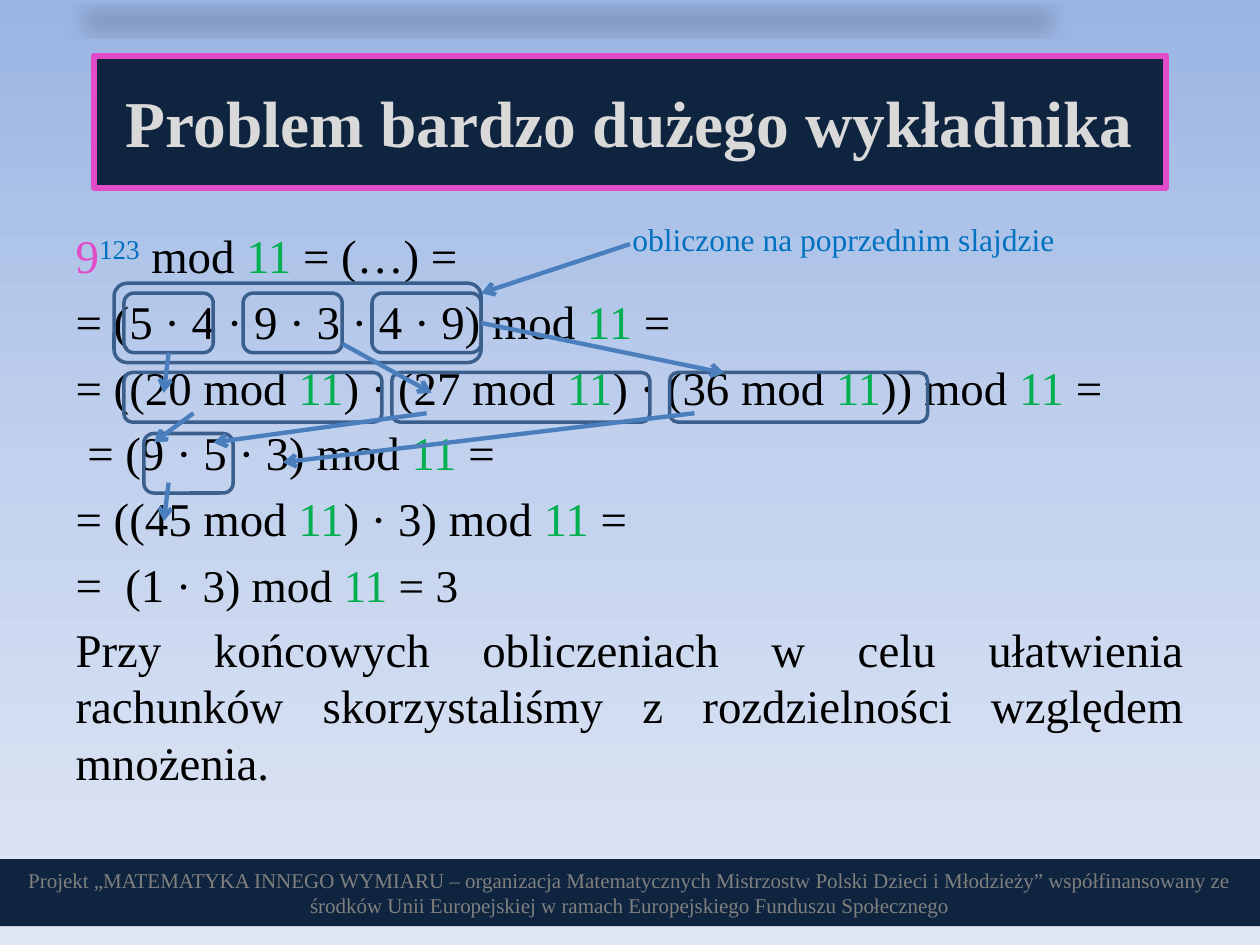
from copy import deepcopy
from dataclasses import dataclass

from lxml import etree
from pptx import Presentation
from pptx import util as u
from pptx.dml.color import RGBColor
from pptx.enum import shapes, text
from pptx.oxml.ns import qn

FONT = "Times New Roman"
C = {
    "sky_top": "9AB5E4", "sky_mid": "C2D1ED", "sky_bottom": "E1E8F5",
    "navy": "0F243E", "pink": "E24CC9", "silver": "D9D9D9", "grey": "808080",
    "black": "000000", "green": "00B050", "blue": "0070C0",
    "outline": "3A5F8C", "arrow": "4B7EBC",
}


@dataclass
class Seg:
    text: str
    color: str = "black"
    size: float = 26.8
    bold: bool = False
    base: int = 0


@dataclass
class Box:
    x: float
    y: float
    w: float
    h: float


@dataclass
class Arrow:
    x1: float
    y1: float
    x2: float
    y2: float
    box: int | None = None
    site: int = 0


LINES = [
    [Seg("9", "pink"), Seg("123", "blue", base=30), Seg(" mod 11 = (…) =")],
    [Seg("= (5 · 4 · 9 · 3 · 4 · 9) mod 11 =")],
    [Seg("= ((20 mod 11) · (27 mod 11) · (36 mod 11)) mod 11 =")],
    [Seg(" = (9 · 5 · 3) mod 11 =")],
    [Seg("= ((45 mod 11) · 3) mod 11 =")],
    [Seg("=  (1 "), Seg("· 3) mod 11 = 3", size=25.9)],
    [Seg("Przy końcowych obliczeniach w celu ułatwienia rachunków "
         "skorzystaliśmy z rozdzielności względem mnożenia.")],
]
PAIRS_Y, MODS_Y = 5.91, 7.51
BOXES = [
    *(Box(x, PAIRS_Y, w, 1.2) for x, w in ((2.5, 1.8), (4.9, 2), (7.5, 2.2))),
    Box(2.3, 5.71, 7.4, 1.6),
    Box(2.9, 8.74, 1.8, 1.2),
    *(Box(x, MODS_Y, 5.2, 1) for x in (2.5, 7.9, 13.5)),
]
ARROWS = [
    Arrow(3.4, 7.11, 3.3, 7.92, box=0, site=2),
    Arrow(6.9, 6.93, 8.7, 7.92),
    Arrow(9.7, 6.51, 14.6, 7.52, box=2, site=3),
    Arrow(12.7, 4.92, 9.7, 5.91),
    Arrow(3.4, 9.73, 3.3, 10.51),
    Arrow(3.9, 8.33, 3.1, 8.92),
    Arrow(8.6, 8.33, 4.3, 8.92),
    Arrow(14, 8.33, 5.7, 9.32),
]


def rgb(name: str) -> RGBColor:
    return RGBColor.from_string(C[name])


def place(sp, b: Box) -> None:
    sp.left, sp.top, sp.width, sp.height = map(u.Cm, (b.x, b.y, b.w, b.h))


def add_run(p, seg: Seg) -> None:
    r = p.add_run()
    r.text = seg.text
    r.font.name = FONT
    r.font.size = u.Pt(seg.size)
    r.font.bold = seg.bold
    r.font.color.rgb = rgb(seg.color)
    if seg.base:
        r.font._element.set("baseline", str(seg.base * 1000))


def add_equation(p, segs: list[Seg]) -> None:
    for seg in segs:
        for i, part in enumerate(seg.text.split("11")):
            if i:
                add_run(p, Seg("11", "green", seg.size))
            add_run(p, Seg(part, seg.color, seg.size, base=seg.base))


def add_frame(s, b: Box):
    sp = s.shapes.add_shape(shapes.MSO_SHAPE.ROUNDED_RECTANGLE,
                            *map(u.Cm, (b.x, b.y, b.w, b.h)))
    sp.shadow.inherit = False
    sp.fill.background()
    sp.line.color.rgb = rgb("outline")
    sp.line.width = u.Pt(2)
    return sp


def add_arrow(s, a: Arrow, frames: list) -> None:
    cx = s.shapes.add_connector(shapes.MSO_CONNECTOR.STRAIGHT,
                                *map(u.Cm, (a.x1, a.y1, a.x2, a.y2)))
    if a.box is not None:
        cx.begin_connect(frames[a.box], a.site)
    cx.line.color.rgb = rgb("arrow")
    cx.line.width = u.Pt(2.5)
    etree.SubElement(cx.line._get_or_add_ln(), qn("a:tailEnd"), type="arrow")
    etree.SubElement(cx.element.spPr, qn("a:effectLst"))


def fill_banner(sp, seg: Seg) -> None:
    sp.fill.solid()
    sp.fill.fore_color.rgb = rgb("navy")
    tf = sp.text_frame
    tf.word_wrap = True
    tf.auto_size = text.MSO_AUTO_SIZE.NONE
    tf.vertical_anchor = text.MSO_ANCHOR.MIDDLE
    p = tf.paragraphs[0]
    p.alignment = text.PP_ALIGN.CENTER
    add_run(p, seg)


def set_background(s) -> None:
    fill = s.background.fill
    fill.gradient()
    fill.gradient_angle = 270
    stops = s.element.find(".//" + qn("a:gsLst"))
    stops.insert(1, deepcopy(stops[0]))
    for i, name in enumerate(("sky_top", "sky_mid", "sky_bottom")):
        fill.gradient_stops[i].position = i / 2
        fill.gradient_stops[i].color.rgb = rgb(name)


def add_title(s) -> None:
    sp = s.shapes.title
    place(sp, Box(1.9, 1.12, 21.6, 2.67))
    fill_banner(sp, Seg("Problem bardzo dużego wykładnika", "silver", 37.4, True))
    sp.line.color.rgb = rgb("pink")
    sp.line.width = u.Pt(3.5)
    effects = etree.SubElement(sp.element.spPr, qn("a:effectLst"))
    shadow = etree.SubElement(
        effects, qn("a:outerShdw"), blurRad=str(u.Pt(12)), dist=str(u.Pt(25)),
        dir="5400000", sx="90000", sy="-19000", rotWithShape="0")
    color = etree.SubElement(shadow, qn("a:srgbClr"), val=C["black"])
    etree.SubElement(color, qn("a:alpha"), val="15000")
    s.shapes.element.append(sp.element)


def add_body(s) -> None:
    sp = s.placeholders[1]
    place(sp, Box(1.27, 4.45, 22.86, 12.57))
    tf = sp.text_frame
    tf.auto_size = text.MSO_AUTO_SIZE.NONE
    for i, segs in enumerate(LINES):
        p = tf.add_paragraph() if i else tf.paragraphs[0]
        pPr = p._p.get_or_add_pPr()
        pPr.set("marL", "0")
        pPr.set("indent", "0")
        etree.SubElement(pPr, qn("a:buNone"))
        add_equation(p, segs)
    p.alignment = text.PP_ALIGN.JUSTIFY


def main() -> None:
    prs = Presentation()
    prs.slide_width, prs.slide_height = u.Cm(25.4), u.Cm(19.05)
    s = prs.slides.add_slide(prs.slide_layouts[1])
    set_background(s)
    add_body(s)
    frames = [add_frame(s, b) for b in BOXES]
    for a in ARROWS:
        add_arrow(s, a, frames)
    note = s.shapes.add_textbox(*map(u.Cm, (12.5, 4.32, 9.12, 1.02)))
    note.text_frame.word_wrap = False
    note.text_frame.auto_size = text.MSO_AUTO_SIZE.SHAPE_TO_FIT_TEXT
    add_run(note.text_frame.paragraphs[0],
            Seg("obliczone na poprzednim slajdzie", "blue", 18))
    footer = s.shapes.add_shape(shapes.MSO_SHAPE.RECTANGLE,
                                *map(u.Cm, (0, 17.32, 25.4, 1.35)))
    footer.shadow.inherit = False
    footer.line.fill.background()
    fill_banner(footer, Seg(
        "Projekt „MATEMATYKA INNEGO WYMIARU – organizacja Matematycznych "
        "Mistrzostw Polski Dzieci i Młodzieży” współfinansowany ze środków "
        "Unii Europejskiej w ramach Europejskiego Funduszu Społecznego", "grey", 12))
    add_title(s)
    prs.save("out.pptx")


if __name__ == "__main__":
    main()
